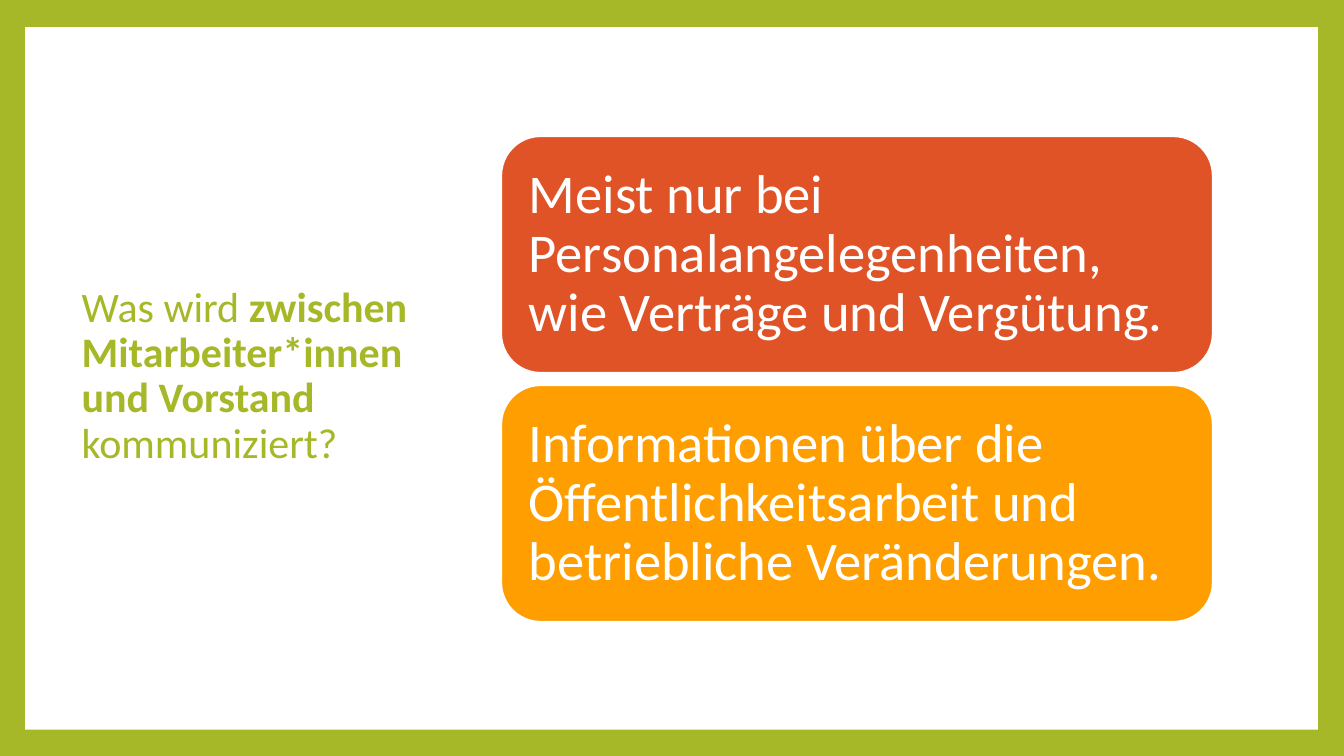
from pptx import Presentation
from pptx.dml.color import RGBColor
from pptx.enum.shapes import MSO_SHAPE as Preset
from pptx.enum.text import MSO_ANCHOR as Anchor, PP_ALIGN as Align
from pptx.util import Inches, Pt

GREEN = RGBColor(0xA6, 0xB7, 0x27)
WHITE = RGBColor(0xFF, 0xFF, 0xFF)
RED = RGBColor(0xDF, 0x53, 0x27)
ORANGE = RGBColor(0xFE, 0x9E, 0x00)

QUESTION = [
    ("Was wird ", False),
    ("zwischen Mitarbeiter*innen und Vorstand ", True),
    ("kommuniziert?", False),
]
ANSWERS = [
    ("Meist nur bei Personalangelegenheiten, wie Verträge und Vergütung.", RED),
    ("Informationen über die Öffentlichkeitsarbeit und betriebliche Veränderungen.", ORANGE),
]


def format_paragraph(paragraph, size, color):
    paragraph.alignment = Align.LEFT
    paragraph.line_spacing = 0.9
    for run in paragraph.runs:
        run.font.name = "Calibri"
        run.font.size = Pt(size)
        run.font.color.rgb = color


def add_block(slide, preset, box, color):
    block = slide.shapes.add_shape(preset, *map(Inches, box))
    block.shadow.inherit = False
    block.fill.solid()
    block.fill.fore_color.rgb = color
    return block


def add_frame(slide, box):
    slide.background.fill.solid()
    slide.background.fill.fore_color.rgb = GREEN
    panel = add_block(slide, Preset.RECTANGLE, box, WHITE)
    panel.line.fill.background()
    slide.shapes.title._element.addprevious(panel._element)


def add_question(slide, box):
    question = slide.shapes.title
    question.left, question.top, question.width, question.height = map(Inches, box)
    frame = question.text_frame
    frame.word_wrap = True
    frame.vertical_anchor = Anchor.MIDDLE
    paragraph = frame.paragraphs[0]
    for wording, bold in QUESTION:
        run = paragraph.add_run()
        run.text = wording
        run.font.bold = bold
    format_paragraph(paragraph, 30, GREEN)


def add_answers(slide, box, gap=0.12):
    left, top, width, height = box
    card_height = (height - gap * (len(ANSWERS) - 1)) / len(ANSWERS)
    for index, (answer, color) in enumerate(ANSWERS):
        card_top = top + index * (card_height + gap)
        card = add_block(slide, Preset.ROUNDED_RECTANGLE,
                         (left, card_top, width, card_height), color)
        card.line.color.rgb = WHITE
        card.line.width = Pt(1.5)
        frame = card.text_frame
        frame.word_wrap = True
        frame.vertical_anchor = Anchor.MIDDLE
        frame.margin_left = frame.margin_right = Inches(0.16)
        frame.margin_top = frame.margin_bottom = Inches(0.16)
        frame.text = answer
        format_paragraph(frame.paragraphs[0], 39, WHITE)


def main():
    deck = Presentation()
    deck.slide_width, deck.slide_height = Inches(13.33), Inches(7.5)
    slide = deck.slides.add_slide(deck.slide_layouts[5])
    add_frame(slide, (0.25, 0.27, 12.82, 6.97))
    add_question(slide, (0.71, 0.67, 3.68, 6.13))
    add_answers(slide, (4.97, 1.35, 7.06, 4.82))
    deck.save("out.pptx")


if __name__ == "__main__":
    main()
